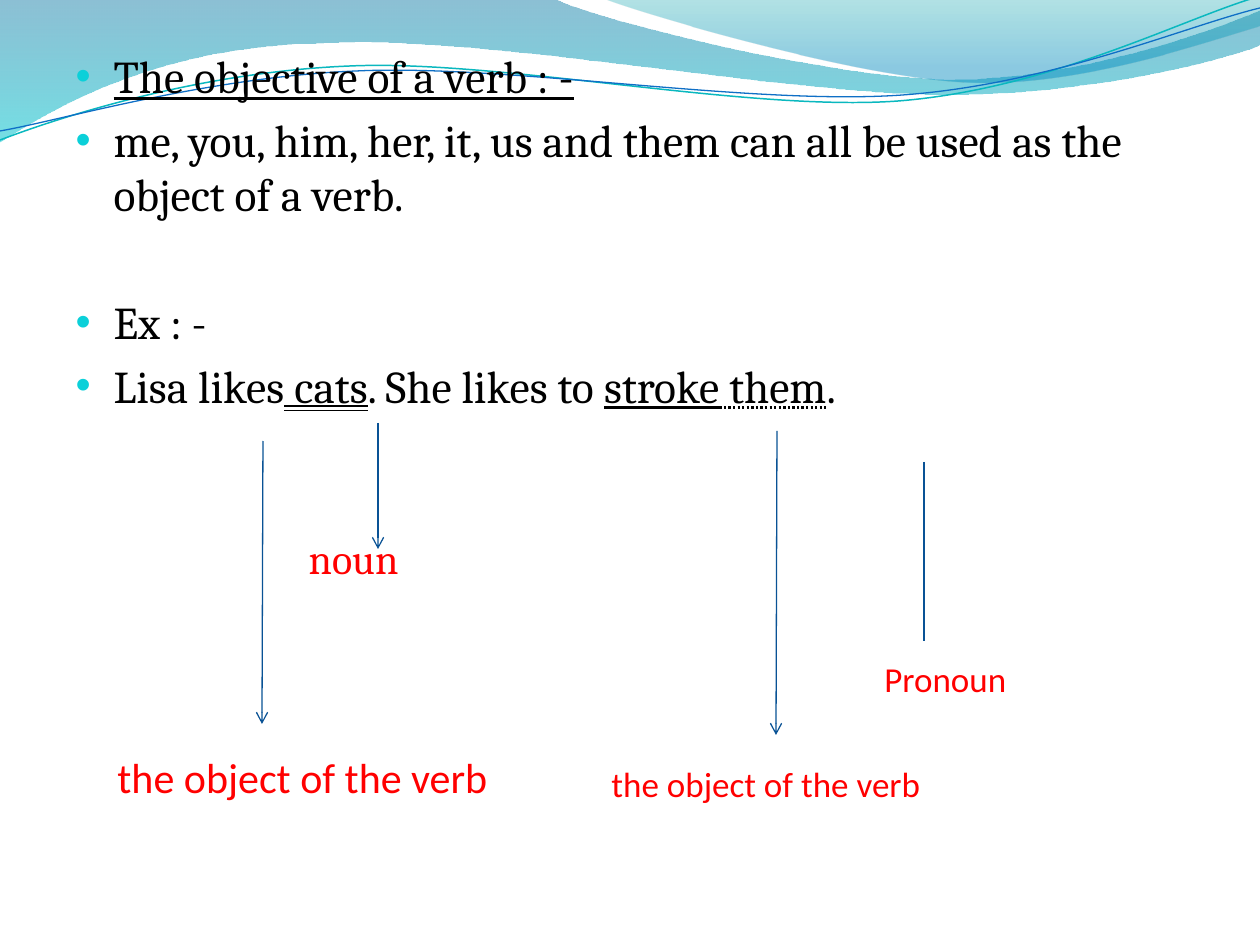
from lxml import etree
from pptx import Presentation
from pptx import util as u
from pptx.dml import color
from pptx.enum import shapes, text
from pptx.oxml import ns

PX = 914400 / 126
UNDERLINE = text.MSO_UNDERLINE
BULLETS = [
    (9, [("The objective of a verb : -", True)]),
    (9, [("me, you, him, her, it, us and them can all be used as the object of a verb.", False)]),
    (73, [("Ex : -", False)]),
    (9, [
        ("Lisa likes", False),
        (" cats", UNDERLINE.DOUBLE_LINE),
        (". She likes to ", False),
        ("stroke", True),
        (" them", UNDERLINE.DOTTED_LINE),
        (".", False),
    ]),
]
BANDS = [
    ([(0, 0), (554, -1),
      (600, 21, 837, 79, 955, 79), (1075, 79, 1207, 33, 1260, 11), (1261, 45),
      (1239, 55, 1096, 96, 940, 94), (784, 94, 481, 35, 324, 43),
      (163, 45, 58, 105, -1, 142)],
     [("0074A1", 45, 0), ("00C6CF", 55, 1)]),
    ([(604, -1), (641, 14, 859, 78, 969, 82), (1079, 87, 1211, 40, 1260, 26), (1260, 0)],
     [("00A1A9", 30, 0), ("008BBF", 45, 0.8)]),
]
STRANDS = [
    ([(0, 140), (60, 117, 199, 72, 349, 66), (498, 59, 747, 112, 898, 101),
      (1050, 89, 1182, 19, 1257, -3)], "0AB8BF", 0.85),
    ([(0, 131), (59, 121, 207, 77, 357, 71), (508, 64, 752, 106, 903, 95),
      (1053, 84, 1186, 26, 1260, 8)], "0F6FC6", 0.75),
]
ARROWS = [
    (378, 423, 378, 549, True),
    (263, 441, 262, 724, True),
    (924, 462, 924, 641, False),
    (777, 431, 776, 735, True),
]
LABELS = [
    ((105, 745, 408, 64), "the object of the verb", 24),
    ((872, 651, 231, 55), "Pronoun", 20),
    ((599, 756, 345, 55), "the object of the verb", 20),
]


def px(length):
    return u.Emu(round(length * PX))


def rgb(value):
    return color.RGBColor.from_string(value)


def add_xml(parent, tag, **values):
    child = etree.SubElement(parent, ns.qn(tag))
    for name, value in values.items():
        child.set(name, str(value))
    return child


def add_span(para, wording, **formats):
    span = para.add_run()
    span.text = wording
    span.font.color.rgb = rgb(formats.pop("color"))
    for name, value in formats.items():
        setattr(span.font, name, value)


def add_curve(page, left, top, segments, closed):
    anchors = [(px(left + segment[-2]), px(top + segment[-1])) for segment in segments]
    builder = page.shapes.build_freeform(*anchors[0], scale=1.0)
    builder.add_line_segments(anchors[1:], close=closed)
    curve = builder.convert_to_shape()
    curve.shadow.inherit = False
    edges = list(curve._element.iter(ns.qn("a:lnTo")))
    for edge, segment in zip(edges, segments[1:]):
        if len(segment) == 6:
            edge.tag = ns.qn("a:cubicBezTo")
            edge.clear()
            for x, y in zip(segment[::2], segment[1::2]):
                add_xml(edge, "a:pt", x=px(left + x) - curve.left, y=px(top + y) - curve.top)
    return curve


def add_waves(page, left, top):
    waves = []
    for segments, stops in BANDS:
        band = add_curve(page, left, top, segments, True)
        band.line.fill.background()
        band.fill.gradient()
        band.fill.gradient_angle = 270
        for stop, (hue, opacity, position) in zip(band.fill.gradient_stops, stops):
            stop.color.rgb = rgb(hue)
            stop.position = position
            add_xml(stop._gs[0], "a:alpha", val=opacity * 1000)
        waves.append(band)
    for segments, hue, width in STRANDS:
        strand = add_curve(page, left, top, segments, False)
        strand.fill.background()
        strand.line.color.rgb = rgb(hue)
        strand.line.width = u.Pt(width)
        waves.append(strand)
    return waves


def move_to_master(waves, master):
    for index, wave in enumerate(waves):
        wave._element.nvSpPr.cNvPr.set("id", str(101 + index))
        master.shapes._spTree.insert(2 + index, wave._element)


def set_paragraph(para, gap, margin, indent):
    para.space_before = px(gap)
    properties = para._p.get_or_add_pPr()
    properties.set("marL", str(px(margin)))
    properties.set("indent", str(px(indent)))
    return properties


def fill_body(body, left, top, width, height):
    for name, value in dict(left=left, top=top, width=width, height=height).items():
        setattr(body, name, px(value))
    frame = body.text_frame
    frame.auto_size = text.MSO_AUTO_SIZE.NONE
    for index, (gap, spans) in enumerate(BULLETS):
        para = frame.add_paragraph() if index else frame.paragraphs[0]
        properties = set_paragraph(para, gap, 38, -38)
        add_xml(add_xml(properties, "a:buClr"), "a:srgbClr", val="0BD0D9")
        add_xml(properties, "a:buSzPct", val=95000)
        add_xml(properties, "a:buFont", typeface="Arial")
        add_xml(properties, "a:buChar", char="•")
        for wording, underline in spans:
            add_span(para, wording, name="Cambria", size=u.Pt(26),
                     color="000000", underline=underline)
    noun = frame.add_paragraph()
    add_xml(set_paragraph(noun, 120, 233, 0), "a:buNone")
    add_span(noun, "noun", name="Cambria", size=u.Pt(24), color="FF0000")


def add_arrow(page, x1, y1, x2, y2, headed):
    arrow = page.shapes.add_connector(
        shapes.MSO_CONNECTOR.STRAIGHT, px(x1), px(y1), px(x2), px(y2))
    arrow.line.color.rgb = rgb("095295")
    arrow.line.width = u.Pt(0.75)
    if headed:
        add_xml(arrow.line._get_or_add_ln(), "a:tailEnd", type="arrow")
    add_xml(arrow._element.spPr, "a:effectLst")


def add_label(page, box, wording, size):
    label = page.shapes.add_textbox(*map(px, box))
    label.text_frame.word_wrap = True
    add_span(label.text_frame.paragraphs[0], wording, name="Calibri",
             size=u.Pt(size), color="FF0000")


def main():
    deck = Presentation()
    deck.slide_width, deck.slide_height = px(1260), px(945)
    page = deck.slides.add_slide(deck.slide_layouts[1])
    title, body = page.placeholders
    title._element.getparent().remove(title._element)
    move_to_master(add_waves(page, 0, 0), deck.slide_master)
    fill_body(body, 63, 42, 1134, 624)
    for arrow in ARROWS:
        add_arrow(page, *arrow)
    for label in LABELS:
        add_label(page, *label)
    deck.save("out.pptx")


if __name__ == "__main__":
    main()
